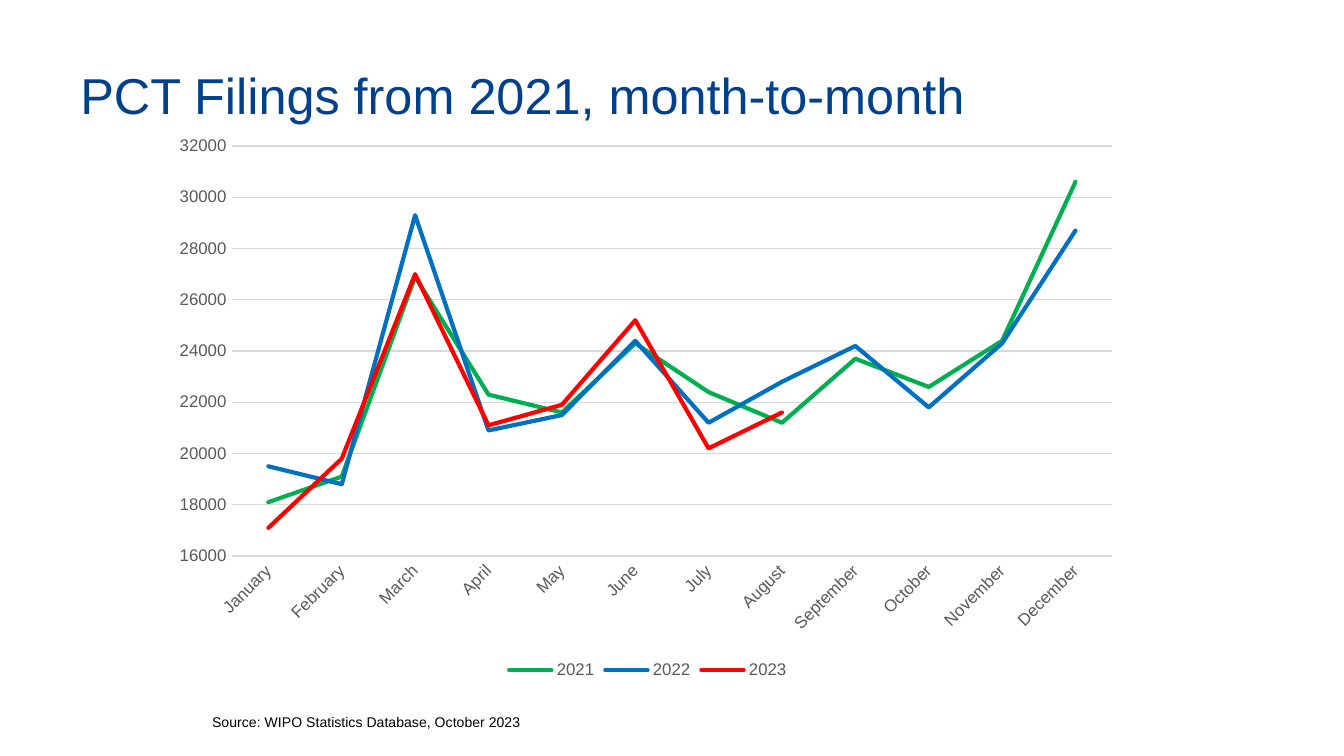
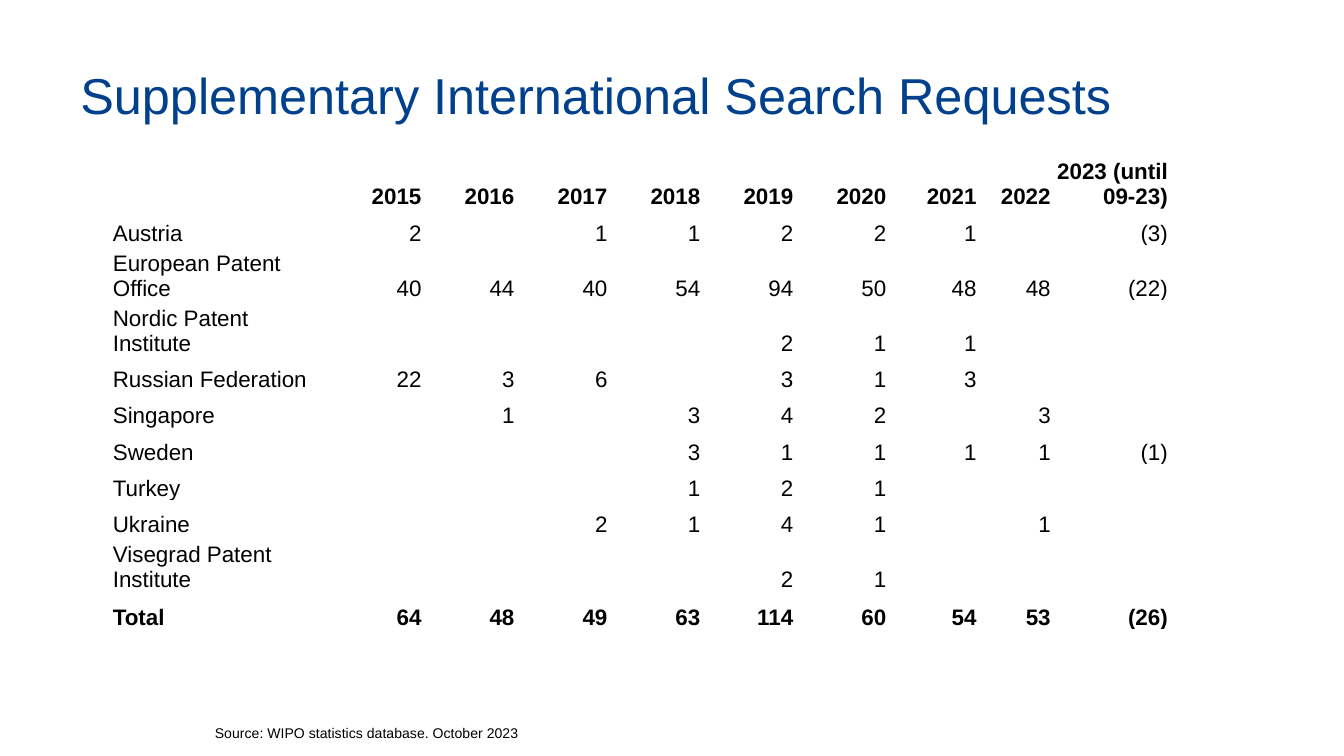
from lxml import etree
from pptx import Presentation
from pptx.chart.data import CategoryChartData
from pptx.dml.color import RGBColor
from pptx.enum import chart as ch, text as tx
from pptx.oxml import ns
from pptx.util import Inches, Pt

NAVY = RGBColor(0x00, 0x40, 0x8C)
BLACK = RGBColor(0x00, 0x00, 0x00)
GRAY = RGBColor(0x59, 0x59, 0x59)
SILVER = RGBColor(0xD9, 0xD9, 0xD9)
GREEN = RGBColor(0x00, 0xB0, 0x50)
BLUE = RGBColor(0x00, 0x70, 0xC0)
RED = RGBColor(0xFF, 0x00, 0x00)
FACE = "Arial"

MONTHS = ["January", "February", "March", "April", "May", "June", "July",
          "August", "September", "October", "November", "December"]
FILINGS = [
    ("2021", GREEN, [18100, 19100, 26900, 22300, 21600, 24300,
                     22400, 21200, 23700, 22600, 24400, 30600]),
    ("2022", BLUE, [19500, 18800, 29300, 20900, 21500, 24400,
                    21200, 22800, 24200, 21800, 24300, 28700]),
    ("2023", RED, [17100, 19800, 27000, 21100, 21900, 25200,
                   20200, 21600] + [None] * 4),
]
PLOT = {"x": 0.07, "y": 0.04, "w": 0.91, "h": 0.73}

SEARCHES = [
    ["", "2015", "2016", "2017", "2018", "2019", "2020", "2021", "2022",
     "2023 (until 09-23)"],
    ["Austria", "2", "", "1", "1", "2", "2", "1", "", "(3)"],
    ["European Patent Office", "40", "44", "40", "54", "94", "50", "48", "48",
     "(22)"],
    ["Nordic Patent Institute", "", "", "", "", "2", "1", "1", "", ""],
    ["Russian Federation", "22", "3", "6", "", "3", "1", "3", "", ""],
    ["Singapore", "", "1", "", "3", "4", "2", "", "3", ""],
    ["Sweden", "", "", "", "3", "1", "1", "1", "1", "(1)"],
    ["Turkey", "", "", "", "1", "2", "1", "", "", ""],
    ["Ukraine", "", "", "2", "1", "4", "1", "", "1", ""],
    ["Visegrad Patent Institute", "", "", "", "", "2", "1", "", "", ""],
    ["Total", "64", "48", "49", "63", "114", "60", "54", "53", "(26)"],
]
SPAN = 7.87
SHARES = [1.62] + [0.69] * 6 + [0.67, 0.55, 0.87]
WIDTHS = [SPAN * share / sum(SHARES) for share in SHARES]
HEIGHTS = [0.38, 0.27, 0.41, 0.41] + [0.27] * 5 + [0.41, 0.28]


def style(font, size, color, bold=False):
    font.name = FACE
    font.size = Pt(size)
    font.color.rgb = color
    font.bold = bold


def write(frame, words, size=12, color=BLACK, bold=False,
          align=tx.PP_ALIGN.LEFT):
    frame.word_wrap = True
    para = frame.paragraphs[0]
    para.alignment = align
    if words:
        run = para.add_run()
        run.text = words
        style(run.font, size, color, bold)
    else:
        end = etree.SubElement(para._p, ns.qn("a:endParaRPr"))
        end.set("sz", str(size * 100))


def add_text(slide, words, box, anchor=tx.MSO_ANCHOR.TOP, **form):
    frame = slide.shapes.add_textbox(*map(Inches, box)).text_frame
    frame.vertical_anchor = anchor
    write(frame, words, **form)


def add_page(deck, title, source, left, top):
    slide = deck.slides.add_slide(deck.slide_layouts[6])
    add_text(slide, title, (0.5, 0.23, 9, 0.94), tx.MSO_ANCHOR.MIDDLE,
             size=27, color=NAVY)
    add_text(slide, source, (left, top, 3.75, 0.23), size=7.5)
    return slide


def place_plot(chart):
    area = chart._chartSpace.chart.plotArea
    for old in area.findall(ns.qn("c:layout")):
        area.remove(old)
    layout = etree.Element(ns.qn("c:layout"))
    area.insert(0, layout)
    manual = etree.SubElement(layout, ns.qn("c:manualLayout"))
    parts = [("layoutTarget", "inner"), ("xMode", "edge"), ("yMode", "edge")]
    for tag, val in parts + list(PLOT.items()):
        etree.SubElement(manual, ns.qn("c:" + tag)).set("val", str(val))


def add_lines(slide):
    data = CategoryChartData()
    data.categories = MONTHS
    for name, _, vals in FILINGS:
        data.add_series(name, vals)
    box = map(Inches, (1.22, 0.92, 7.2, 4.18))
    chart = slide.shapes.add_chart(ch.XL_CHART_TYPE.LINE, *box, data).chart
    style(chart.font, 10, BLACK)
    chart.has_title = False
    chart.has_legend = True
    chart.legend.position = ch.XL_LEGEND_POSITION.BOTTOM
    chart.legend.include_in_layout = False
    style(chart.legend.font, 9, GRAY)
    plot = chart.plots[0]
    plot.vary_by_categories = False
    for line, (_, color, _) in zip(plot.series, FILINGS):
        line.smooth = False
        line.marker.style = ch.XL_MARKER_STYLE.NONE
        line.format.line.color.rgb = color
        line.format.line.width = Pt(2.25)
        line._element.spPr.find(ns.qn("a:ln")).set("cap", "rnd")
    cat, val = chart.category_axis, chart.value_axis
    for axis in (cat, val):
        axis.major_tick_mark = axis.minor_tick_mark = ch.XL_TICK_MARK.NONE
        style(axis.tick_labels.font, 9, GRAY)
    cat._element.find(ns.qn("c:txPr")).bodyPr.set("rot", "-2700000")
    val.minimum_scale, val.maximum_scale, val.major_unit = 16000, 32000, 2000
    val.has_major_gridlines = True
    val.format.line.fill.background()
    for rule in (cat.format.line, val.major_gridlines.format.line):
        rule.color.rgb = SILVER
        rule.width = Pt(0.75)
    place_plot(chart)


def add_grid(slide):
    box = (0.83, 1.15, SPAN, sum(HEIGHTS))
    grid = slide.shapes.add_table(len(HEIGHTS), len(WIDTHS),
                                  *map(Inches, box)).table
    grid.first_row = grid.horz_banding = False
    for col, width in zip(grid.columns, WIDTHS):
        col.width = Inches(width)
    for row, height in zip(grid.rows, HEIGHTS):
        row.height = Inches(height)
    for r, row in enumerate(SEARCHES):
        for c, words in enumerate(row):
            cell = grid.cell(r, c)
            cell.fill.background()
            cell.vertical_anchor = tx.MSO_ANCHOR.BOTTOM
            cell.margin_left = cell.margin_right = Inches(0.01)
            cell.margin_top, cell.margin_bottom = Inches(0.01), 0
            write(cell.text_frame, words,
                  bold=r in (0, len(SEARCHES) - 1),
                  align=tx.PP_ALIGN.RIGHT if c else tx.PP_ALIGN.LEFT)


def main():
    deck = Presentation()
    deck.slide_width = Inches(10)
    deck.slide_height = deck.slide_width * 9 // 16
    add_lines(add_page(deck, "PCT Filings from 2021, month-to-month",
                       "Source: WIPO Statistics Database, October 2023",
                       1.48, 5.26))
    add_grid(add_page(deck, "Supplementary International Search Requests",
                      "Source: WIPO statistics database. October 2023",
                      1.5, 5.34))
    deck.save("out.pptx")


if __name__ == "__main__":
    main()
